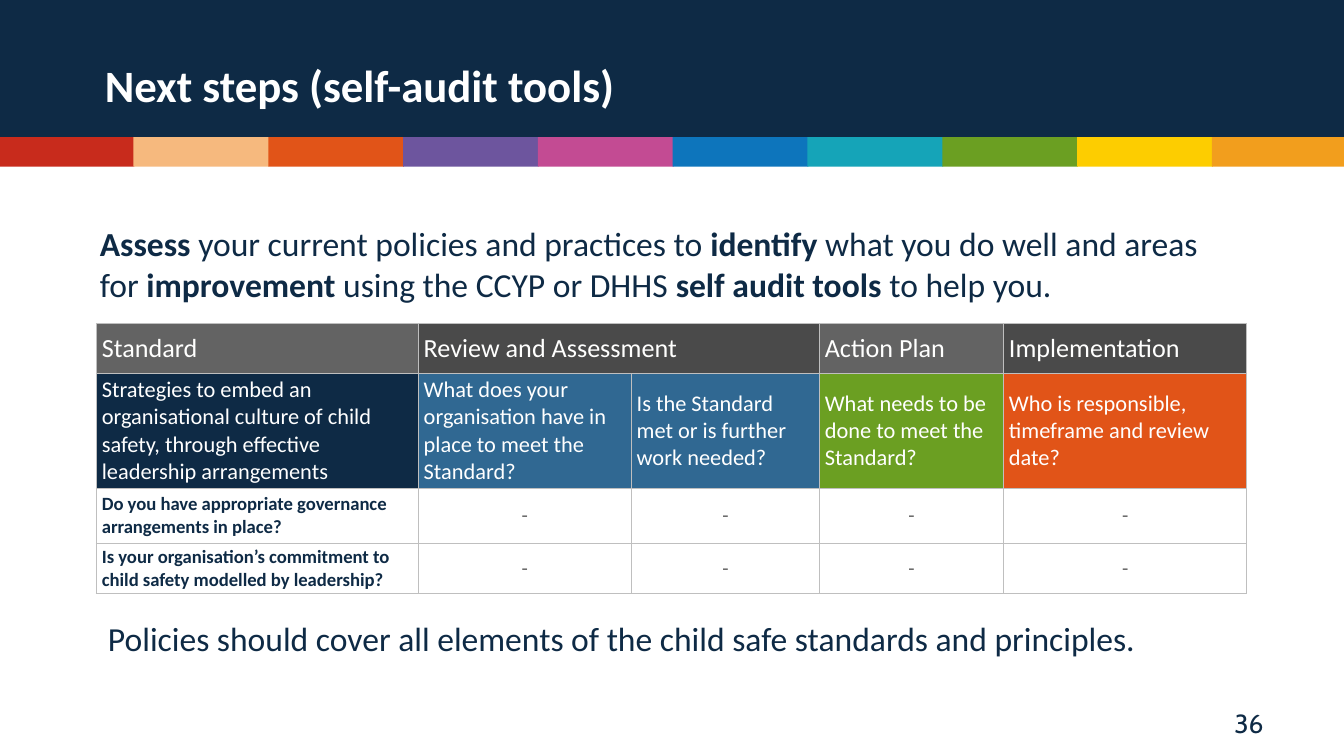
"""Build the self-audit tools slide with its colour band and audit table."""
from dataclasses import dataclass
from typing import Any

import pptx
import pptx.dml.color
import pptx.enum.shapes
import pptx.enum.text
import pptx.oxml
import pptx.oxml.ns
import pptx.util

WIDE = pptx.util.Inches(10)
HIGH = WIDE * 9 // 16
ALIGN = pptx.enum.text.PP_ALIGN
MID = pptx.enum.text.MSO_ANCHOR.MIDDLE
HUES = {
    "navy": "0E2A45", "white": "FFFFFF", "pale": "FFFFFE", "rule": "BFBFBF",
    "grey": "636363", "dark": "4A4A4A", "steel": "306892",
    "red": "C82B1C", "peach": "F6B97E", "orange": "E15418",
    "purple": "6D559E", "pink": "C34B93", "blue": "0D75BC",
    "teal": "15A4B8", "green": "6B9F22", "yellow": "FDCD00",
    "amber": "F29E1D",
}
BAND = ("red", "peach", "orange", "purple", "pink",
        "blue", "teal", "green", "yellow", "amber")
COLS = (23.95, 15.85, 14, 13.7, 18.1)
ROWS = (6.58, 14.95, 7.29, 6.58)


@dataclass
class Box:
    """A place on the slide, in percent of its width and height."""
    left: float
    top: float
    width: float
    height: float

    def place(self) -> tuple[int, int, int, int]:
        return (across(self.left), down(self.top),
                across(self.width), down(self.height))


@dataclass
class Font:
    """The look of a run of text."""
    size: float
    hue: str = "navy"
    bold: bool = False
    name: str = "Calibri"


@dataclass
class Cell:
    """A table cell: wording, look, fill, alignment and paragraph gap."""
    text: str
    font: Font
    fill: str = ""
    align: Any = ALIGN.LEFT
    gap: float = 0


def across(part: float) -> int:
    return int(WIDE * part / 100)


def down(part: float) -> int:
    return int(HIGH * part / 100)


def color(hue: str) -> pptx.dml.color.RGBColor:
    return pptx.dml.color.RGBColor.from_string(HUES[hue])


def style(run: Any, font: Font) -> None:
    run.font.name = font.name
    run.font.size = pptx.util.Pt(font.size)
    run.font.bold = font.bold
    run.font.color.rgb = color(font.hue)


def block(slide: Any, box: Box, hue: str) -> None:
    kind = pptx.enum.shapes.MSO_SHAPE.RECTANGLE
    shape = slide.shapes.add_shape(kind, *box.place())
    shape.shadow.inherit = False
    shape.fill.solid()
    shape.fill.fore_color.rgb = color(hue)
    shape.line.fill.background()


def write(slide: Any, box: Box, lines: list[list[str]], font: Font,
          align: Any = ALIGN.LEFT) -> None:
    """Write lines of parts, where every part that starts with * is bold."""
    frame = slide.shapes.add_textbox(*box.place()).text_frame
    frame.word_wrap = True
    para = frame.paragraphs[0]
    para.alignment = align
    for row, parts in enumerate(lines):
        if row:
            para.add_line_break()
        for part in parts:
            run = para.add_run()
            run.text = part.removeprefix("*")
            style(run, font)
            run.font.bold = part.startswith("*")


def edge(cell: Any) -> None:
    """Rule all four sides of a cell, ahead of its fill."""
    props = cell._tc.get_or_add_tcPr()
    space = pptx.oxml.ns.nsdecls("a")
    for spot, side in enumerate(("lnL", "lnR", "lnT", "lnB")):
        props.insert(spot, pptx.oxml.parse_xml(
            f'<a:{side} {space} w="9525"><a:solidFill>'
            f'<a:srgbClr val="{HUES["rule"]}"/></a:solidFill></a:{side}>'))


def fill(cell: Any, item: Cell) -> None:
    cell.vertical_anchor = MID
    cell.margin_left = cell.margin_right = pptx.util.Inches(0.04)
    cell.margin_top = cell.margin_bottom = pptx.util.Inches(0.02)
    if item.fill:
        cell.fill.solid()
        cell.fill.fore_color.rgb = color(item.fill)
    else:
        cell.fill.background()
    edge(cell)
    cell.text_frame.text = item.text
    para = cell.text_frame.paragraphs[0]
    para.alignment = item.align
    para.space_before = para.space_after = pptx.util.Pt(item.gap)
    for run in para.runs:
        style(run, item.font)


def grid(slide: Any, box: Box, cells: list[list[Cell]]) -> None:
    table = slide.shapes.add_table(len(ROWS), len(COLS), *box.place()).table
    table.horz_banding = table.first_row = False
    for col, part in zip(table.columns, COLS):
        col.width = across(part)
    for row, part in zip(table.rows, ROWS):
        row.height = down(part)
    for y, items in enumerate(cells):
        for x, item in enumerate(items):
            fill(table.cell(y, x), item)
    table.cell(0, 1).merge(table.cell(0, 2))


def head(slide: Any, box: Box, text: str) -> None:
    """Fill the title and bring it in front of the band."""
    title = slide.shapes.title
    title.left, title.top, title.width, title.height = box.place()
    frame = title.text_frame
    frame.text = text
    frame.vertical_anchor = MID
    frame.paragraphs[0].alignment = ALIGN.LEFT
    frame.margin_left = frame.margin_right = pptx.util.Inches(0.09)
    style(frame.paragraphs[0].runs[0], Font(24, "white", True))
    title.element.getparent().append(title.element)


def audit() -> list[list[Cell]]:
    """Give the cells of the audit table, row by row."""
    tops = (("Standard", "grey"), ("Review and Assessment", "dark"),
            ("", "dark"), ("Action Plan", "grey"),
            ("Implementation", "dark"))
    asks = (("Strategies to embed an organisational culture of child safety, "
             "through effective leadership arrangements", "navy"),
            ("What does your organisation have in place to meet the "
             "Standard?", "steel"),
            ("Is the Standard met or is further work needed?", "steel"),
            ("What needs to be done to meet the Standard?", "green"),
            ("Who is responsible, timeframe and review date?", "orange"))
    checks = ("Do you have appropriate governance arrangements in place?",
              "Is your organisation’s commitment to child safety modelled "
              "by leadership?")
    rows = [[Cell(text, font, hue, gap=3) for text, hue in items]
            for font, items in ((Font(14, "pale"), tops),
                                (Font(12, "white"), asks))]
    dash = Cell("-", Font(11, "grey"), align=ALIGN.CENTER)
    return rows + [[Cell(text, Font(10, bold=True))] + [dash] * 4
                   for text in checks]


def main() -> None:
    deck = pptx.Presentation()
    deck.slide_width, deck.slide_height = WIDE, HIGH
    slide = deck.slides.add_slide(deck.slide_layouts[5])
    block(slide, Box(0, 0, 100.4, 18.31), "navy")
    for spot, hue in enumerate(BAND):
        block(slide, Box(10.03 * spot - 0.1, 18.13, 10.1, 3.91), hue)
    write(slide, Box(71.7, 92.65, 23.3, 5.33), [["36"]],
          Font(14, name="Cabin"), ALIGN.RIGHT)
    write(slide, Box(6.45, 28.65, 90, 12.62), [
        ["*Assess", " your current policies and practices to ",
         "*identify", " what you do well and areas "],
        ["for ", "*improvement", " using the CCYP or DHHS ",
         "*self audit tools ", "to help you."]], Font(18))
    head(slide, Box(6.9, 4.05, 86.3, 14.4), "Next steps (self-audit tools)")
    grid(slide, Box(7.18, 42.84, sum(COLS), sum(ROWS)), audit())
    write(slide, Box(7.05, 80.89, 86.1, 7.11),
          [["Policies should cover all elements of the child safe "
            "standards and principles."]], Font(18))
    deck.save("out.pptx")


if __name__ == "__main__":
    main()
